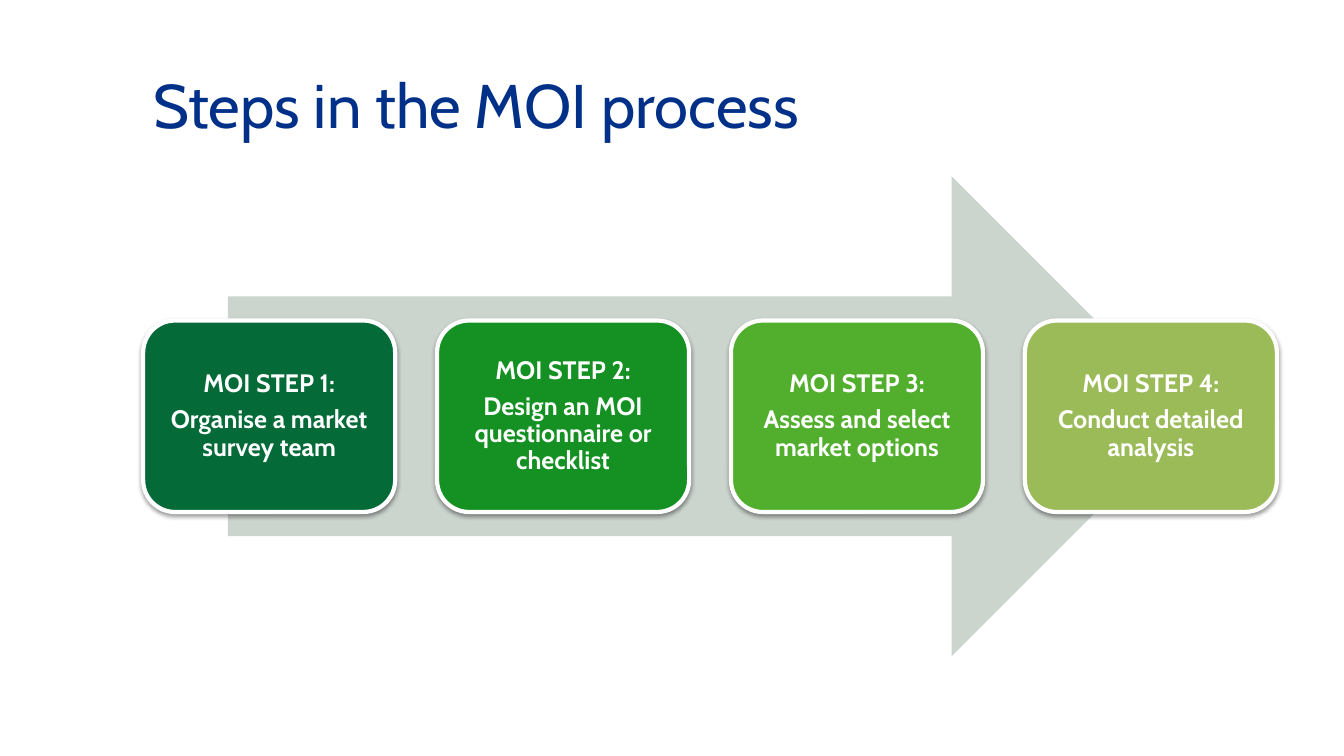
from lxml import etree
from pptx import Presentation
from pptx.dml.color import RGBColor
from pptx.enum import shapes, text
from pptx.oxml import ns
from pptx.util import Inches, Pt

FONT = "Cabin"
NAVY = RGBColor(0x00, 0x30, 0x87)
GREY = RGBColor(0xCC, 0xD4, 0xCE)
WHITE = RGBColor(0xFF, 0xFF, 0xFF)
STEPS = [
    ("Organise a market survey team", RGBColor(0x04, 0x6A, 0x38)),
    ("Design an MOI questionnaire or checklist", RGBColor(0x14, 0x91, 0x22)),
    ("Assess and select market options", RGBColor(0x52, 0xAF, 0x2D)),
    ("Conduct detailed analysis", RGBColor(0x9B, 0xBB, 0x59)),
]
LEFT = 1.42
STEP_PITCH = 2.915
SOFT_SHADOW = (
    f'<a:outerShdw {ns.nsdecls("a")} blurRad="40000" dist="20000" dir="5400000" rotWithShape="0">'
    '<a:srgbClr val="000000"><a:alpha val="38000"/></a:srgbClr></a:outerShdw>'
)

prs = Presentation()
prs.slide_width = Inches(13.33)
prs.slide_height = Inches(7.5)
slide = prs.slides.add_slide(prs.slide_layouts[6])

title = slide.shapes.add_textbox(Inches(LEFT), Inches(0.52), Inches(11.25), Inches(1.03))
title_frame = title.text_frame
title_frame.word_wrap = True
title_frame.vertical_anchor = text.MSO_ANCHOR.MIDDLE
heading = title_frame.paragraphs[0]
heading.text = "Steps in the MOI process"
heading.font.name = FONT
heading.font.size = Pt(44)
heading.font.color.rgb = NAVY

arrow = slide.shapes.add_shape(
    shapes.MSO_SHAPE.RIGHT_ARROW, Inches(2.26), Inches(1.75), Inches(9.56), Inches(4.76)
)
arrow.shadow.inherit = False
arrow.fill.solid()
arrow.fill.fore_color.rgb = GREY
arrow.line.fill.background()

for index, (task, green) in enumerate(STEPS):
    step = slide.shapes.add_shape(
        shapes.MSO_SHAPE.ROUNDED_RECTANGLE,
        Inches(LEFT + index * STEP_PITCH), Inches(3.18), Inches(2.5), Inches(1.9),
    )
    step.fill.solid()
    step.fill.fore_color.rgb = green
    step.line.color.rgb = WHITE
    step.line.width = Pt(3)
    step.shadow.inherit = False
    effects = step._element.spPr.find(ns.qn("a:effectLst"))
    effects.append(etree.fromstring(SOFT_SHADOW))

    frame = step.text_frame
    frame.word_wrap = True
    frame.vertical_anchor = text.MSO_ANCHOR.MIDDLE
    frame.margin_left = frame.margin_right = Inches(0.07)
    frame.margin_top = frame.margin_bottom = Inches(0.07)
    frame.text = f"MOI STEP {index + 1}:\n{task}"
    for paragraph in frame.paragraphs:
        paragraph.alignment = text.PP_ALIGN.CENTER
        paragraph.line_spacing = 0.9
        paragraph.space_after = Pt(6.3)
        paragraph.font.name = FONT
        paragraph.font.size = Pt(18)
        paragraph.font.bold = True
        paragraph.font.color.rgb = WHITE

prs.save("out.pptx")
